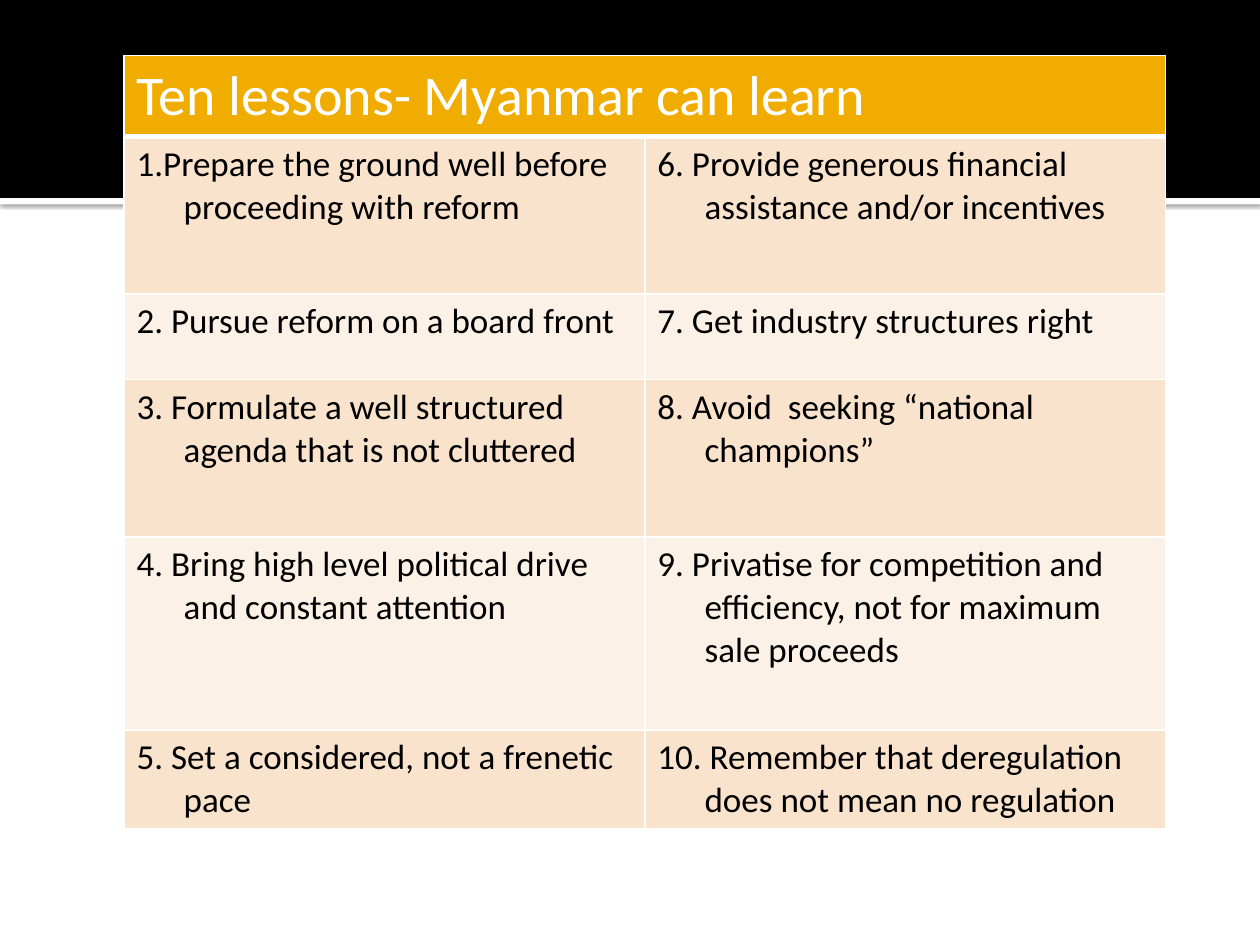
from lxml import etree
from pptx import Presentation
from pptx.dml.color import RGBColor
from pptx.enum.shapes import MSO_SHAPE
from pptx.oxml.ns import qn
from pptx.util import Cm, Pt

RECTANGLE = MSO_SHAPE.RECTANGLE
FONT = "Calibri"
WHITE, BLACK, GOLD = "FFFFFF", "000000", "F0AD00"
BANDS = ("F9E3CC", "FCF1E7")
TITLE = "Ten lessons- Myanmar can learn"
LESSONS = [
    ("1.Prepare the ground well before proceeding with reform",
     "6. Provide generous financial assistance and/or incentives"),
    ("2. Pursue reform on a board front", "7. Get industry structures right"),
    ("3. Formulate a well structured agenda that is not cluttered",
     "8. Avoid  seeking “national champions”"),
    ("4. Bring high level political drive and constant attention",
     "9. Privatise for competition and efficiency, not for maximum sale proceeds"),
    ("5. Set a considered, not a frenetic pace",
     "10. Remember that deregulation does not mean no regulation"),
]
ROW_HEIGHTS = (1.63, 3.17, 1.73, 3.17, 3.89, 1.98)


def color(value):
    """Return the colour for a hex string."""
    return RGBColor.from_string(value)


def add_element(parent, tag, **attributes):
    """Append a drawing element with the given attributes."""
    element = etree.SubElement(parent, qn(tag))
    for name, value in attributes.items():
        element.set(name, str(value))
    return element


def add_bar(slide, left, top, width, height, fill):
    """Add a plain rectangle without outline or shadow."""
    shape = slide.shapes.add_shape(RECTANGLE, Cm(left), Cm(top), Cm(width), Cm(height))
    shape.shadow.inherit = False
    shape.fill.solid()
    shape.fill.fore_color.rgb = color(fill)
    shape.line.fill.background()
    return shape


def add_banner(slide, left, top, width, height):
    """Draw the black band and the shadowed white strip below it."""
    strip = add_bar(slide, left, top + height, width, 0.13, WHITE)
    effects = strip._element.spPr.find(qn("a:effectLst"))
    shadow = add_element(effects, "a:outerShdw", blurRad=Pt(2.5), dist=Pt(0.8),
                         dir=5400000, algn="tl", rotWithShape=0)
    shade = add_element(shadow, "a:srgbClr", val=BLACK)
    add_element(shade, "a:alpha", val=60000)
    add_bar(slide, left, top, width, height, BLACK)


def style_cell(cell, fill, bottom_width=1):
    """Give a cell white borders and a solid fill."""
    properties = cell._tc.get_or_add_tcPr()
    for side, points in (("L", 1), ("R", 1), ("T", 1), ("B", bottom_width)):
        line = add_element(properties, f"a:ln{side}", w=Pt(points))
        add_element(add_element(line, "a:solidFill"), "a:srgbClr", val=WHITE)
    cell.fill.solid()
    cell.fill.fore_color.rgb = color(fill)


def write_cell(cell, text, size, text_color, indent=0):
    """Write one paragraph with an optional hanging indent."""
    cell.text = text
    paragraph = cell.text_frame.paragraphs[0]
    font = paragraph.font
    font.name, font.size, font.bold = FONT, Pt(size), False
    font.color.rgb = color(text_color)
    if indent:
        properties = paragraph._p.get_or_add_pPr()
        properties.set("marL", str(Cm(indent)))
        properties.set("indent", str(-Cm(indent)))


def add_lessons(slide, left, top, width):
    """Place the lessons table with its merged heading row."""
    frame = slide.shapes.add_table(len(ROW_HEIGHTS), 2, Cm(left), Cm(top),
                                   Cm(width), Cm(sum(ROW_HEIGHTS)))
    table = frame.table
    for row, height in zip(table.rows, ROW_HEIGHTS):
        row.height = Cm(height)
    for column in range(2):
        style_cell(table.cell(0, column), GOLD, bottom_width=3)
    table.cell(0, 0).merge(table.cell(0, 1))
    write_cell(table.cell(0, 0), TITLE, 32, WHITE)
    for index, pair in enumerate(LESSONS):
        for column, text in enumerate(pair):
            cell = table.cell(index + 1, column)
            style_cell(cell, BANDS[index % 2])
            write_cell(cell, text, 20, BLACK, indent=0.95)


def main():
    """Build and save the presentation."""
    presentation = Presentation()
    presentation.slide_width, presentation.slide_height = Cm(25.4), Cm(19.05)
    slide = presentation.slides.add_slide(presentation.slide_layouts[6])
    add_banner(slide, 0, 0, 25.4, 3.99)
    add_lessons(slide, 2.5, 1.12, 21)
    presentation.save("out.pptx")


if __name__ == "__main__":
    main()
